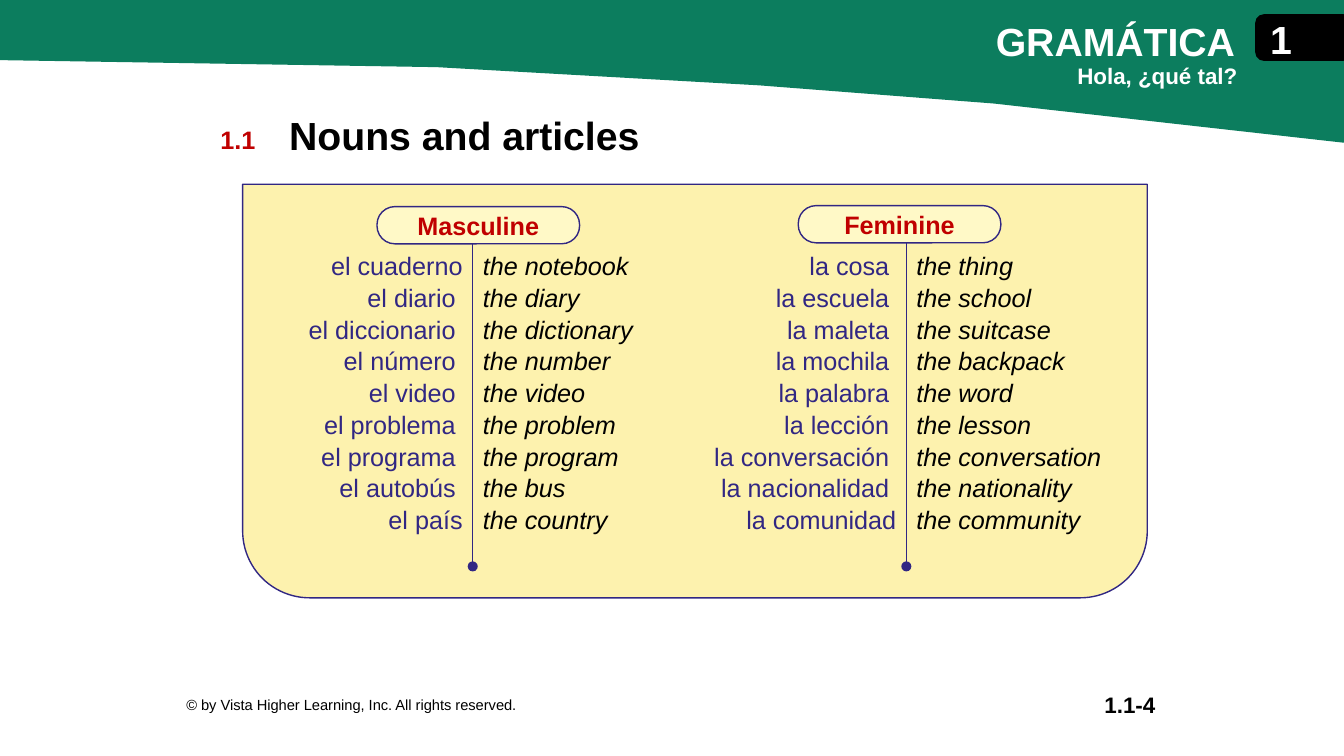
from lxml import etree
from pptx import Presentation
from pptx.dml.color import RGBColor
from pptx.enum.shapes import MSO_SHAPE
from pptx.enum.text import MSO_ANCHOR, PP_ALIGN
from pptx.oxml.ns import qn
from pptx.util import Pt

LEFT, CENTER, RIGHT = PP_ALIGN.LEFT, PP_ALIGN.CENTER, PP_ALIGN.RIGHT
TOP, MIDDLE = MSO_ANCHOR.TOP, MSO_ANCHOR.MIDDLE
ROUNDED, ROUNDED_PAIR = MSO_SHAPE.ROUNDED_RECTANGLE, MSO_SHAPE.ROUND_2_SAME_RECTANGLE
OVAL = MSO_SHAPE.OVAL

# Content
COLORS = {"green": "0C7D5E", "red": "C00000", "black": "000000", "white": "FFFFFF",
          "indigo": "312783", "panel": "FDF2AE", "pill": "FFF9C7"}
HEADING = "Nouns and articles"
# text, left, top, width, height, size, colour, bold, alignment, anchor
LABELS = [
    ("1.1", 140.4, 85, 59, 28.8, 18, "red", True, CENTER, MIDDLE),
    ("GRAMÁTICA", 704.2, 8.6, 255.6, 41, 28, "white", True, LEFT, TOP),
    ("Hola, ¿qué tal?", 762.5, 41, 131, 26.6, 16, "white", True, LEFT, TOP),
    ("1", 895, 13, 40, 28.8, 28, "white", True, CENTER, MIDDLE),
    ("1.1-4", 615.6, 491, 216.7, 25.2, 16, "black", True, RIGHT, MIDDLE),
    ("© by Vista Higher Learning, Inc. All rights reserved.",
     126, 491, 464.4, 25.2, 10.5, "black", False, LEFT, MIDDLE),
]
# Pill text, pill left, pill top, Spanish nouns, English nouns
GENDERS = [
    ("Masculine", 269.3, 147.6,
     ["el cuaderno", "el diario ", "el diccionario ", "el número ", "el video ",
      "el problema ", "el programa ", "el autobús ", "el país"],
     ["the notebook", "the diary", "the dictionary", "the number", "the video",
      "the problem", "the program", "the bus", "the country"]),
    ("Feminine", 570.2, 146.9,
     ["la cosa ", "la escuela ", "la maleta ", "la mochila ", "la palabra ",
      "la lección ", "la conversación ", "la nacionalidad ", "la comunidad"],
     ["the thing", "the school", "the suitcase", "the backpack", "the word",
      "the lesson", "the conversation", "the nationality", "the community"]),
]
BAND = [(960, 101.5), (710, 74.2), (541.5, 61.2), (312.5, 48.2), (0, 43.2), (0, 0), (960, 0)]
COLUMNS = [139, 134, 175.7, 163.4]
TABLE_LEFT, TABLE_TOP, TABLE_HEIGHT = 198.7, 173.5, 229
DOT, PILL_WIDTH, PILL_HEIGHT = 7.2, 144.7, 26.6


def rgb(name):
    return RGBColor.from_string(COLORS[name])


def paint(shape, fill, line=None):
    shape.shadow.inherit = False
    shape.fill.solid()
    shape.fill.fore_color.rgb = rgb(fill)
    if line:
        shape.line.color.rgb = rgb(line)
        shape.line.width = Pt(1)
    else:
        shape.line.fill.background()


def add_part(kind, left, top, width, height, fill, line=None):
    part = slide.shapes.add_shape(kind, Pt(left), Pt(top), Pt(width), Pt(height))
    paint(part, fill, line)
    return part


def style(paragraph, size, color, bold=False, italic=False, align=LEFT):
    paragraph.alignment = align
    for run in paragraph.runs:
        run.font.name = "Arial"
        run.font.size = Pt(size)
        run.font.bold = bold
        run.font.italic = italic
        run.font.color.rgb = rgb(color)


def set_borders(cell, divider):
    """Draw only the given side ("L" or "R") of the cell."""
    properties = cell._tc.get_or_add_tcPr()
    for position, side in enumerate("LRTB"):
        border = etree.Element(qn("a:ln" + side), w=str(Pt(1)))
        if side == divider:
            solid = etree.SubElement(border, qn("a:solidFill"))
            etree.SubElement(solid, qn("a:srgbClr"), val=COLORS["indigo"])
        else:
            etree.SubElement(border, qn("a:noFill"))
        properties.insert(position, border)


def fill_cell(cell, words, spanish):
    cell.text_frame.text = "\n".join(words)
    cell.margin_left = cell.margin_top = cell.margin_right = Pt(7.2)
    cell.margin_bottom = Pt(0)
    cell.fill.background()
    set_borders(cell, "R" if spanish else "L")
    for paragraph in cell.text_frame.paragraphs:
        paragraph.space_after = Pt(2.5)
        style(paragraph, 18, "indigo" if spanish else "black",
              italic=not spanish, align=RIGHT if spanish else LEFT)


prs = Presentation()
prs.slide_width, prs.slide_height = Pt(960), Pt(540)
slide = prs.slides.add_slide(prs.slide_layouts[5])

# Heading
title = slide.shapes.title
title.left, title.top, title.width, title.height = Pt(199.4), Pt(75.6), Pt(596), Pt(41)
title.text_frame.text = HEADING
title.text_frame.vertical_anchor = TOP
style(title.text_frame.paragraphs[0], 28, "black", bold=True)

# Green band and chapter tab
builder = slide.shapes.build_freeform(*BAND[0], scale=Pt(1))
builder.add_line_segments(BAND[1:], close=True)
paint(builder.convert_to_shape(), "green")
tab = add_part(ROUNDED_PAIR, 912.2, -4.5, 32.4, 62.6, "black", "black")
tab.adjustments[0] = 0.178
tab.rotation = 270

# Labels and footer
for text, left, top, width, height, size, color, bold, align, anchor in LABELS:
    frame = slide.shapes.add_textbox(Pt(left), Pt(top), Pt(width), Pt(height)).text_frame
    frame.word_wrap = True
    frame.vertical_anchor = anchor
    frame.text = text
    style(frame.paragraphs[0], size, color, bold, align=align)

# Yellow panel
panel = add_part(ROUNDED_PAIR, 173.3, 131.6, 646.2, 295.4, "panel", "indigo")
panel.adjustments[0] = 0.162
panel.rotation = 180

# Noun table
table = slide.shapes.add_table(1, len(COLUMNS), Pt(TABLE_LEFT), Pt(TABLE_TOP),
                               Pt(sum(COLUMNS)), Pt(TABLE_HEIGHT)).table
table.first_row = table.horz_banding = False
for column, width in zip(table.columns, COLUMNS):
    column.width = Pt(width)

# Words, pill and divider end of each gender
for index, (gender, pill_left, pill_top, spanish, english) in enumerate(GENDERS):
    fill_cell(table.cell(0, 2 * index), spanish, True)
    fill_cell(table.cell(0, 2 * index + 1), english, False)

    divider_x = TABLE_LEFT + sum(COLUMNS[:2 * index + 1])
    add_part(OVAL, divider_x - DOT / 2, 401, DOT, DOT, "indigo")

    pill = add_part(ROUNDED, pill_left, pill_top, PILL_WIDTH, PILL_HEIGHT, "pill", "indigo")
    pill.adjustments[0] = 0.481
    pill.text_frame.text = gender
    pill.text_frame.vertical_anchor = MIDDLE
    style(pill.text_frame.paragraphs[0], 18, "red", bold=True, align=CENTER)

prs.save("out.pptx")
